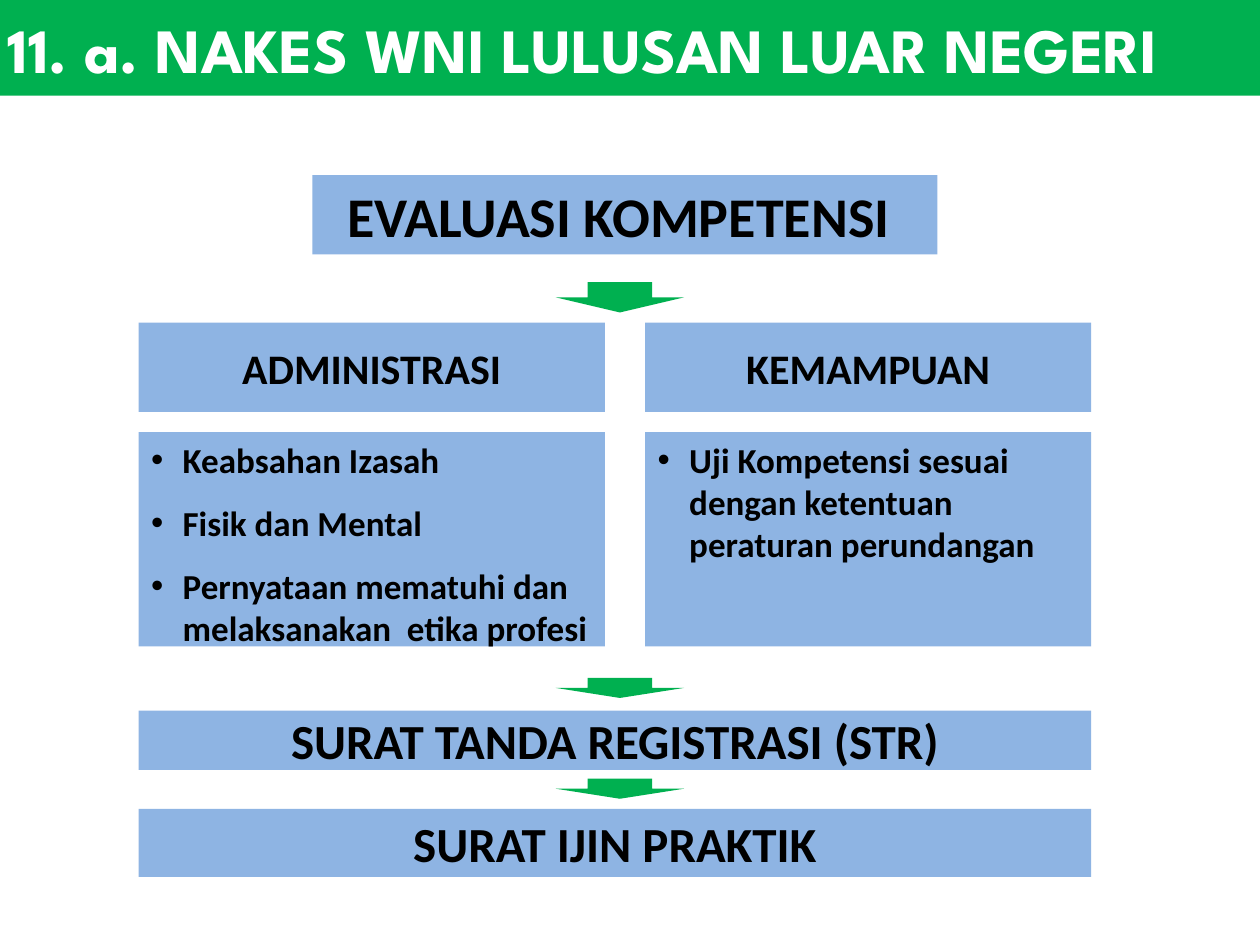
import pptx
import pptx.util
import pptx.dml.color
import pptx.enum.shapes
import pptx.enum.text
import pptx.oxml.ns
from lxml import etree

Inches = pptx.util.Inches
Pt = pptx.util.Pt
SHAPES = pptx.enum.shapes.MSO_SHAPE
ALIGN = pptx.enum.text.PP_ALIGN
ANCHOR = pptx.enum.text.MSO_ANCHOR

TITLE = "11. a. NAKES WNI LULUSAN LUAR NEGERI"
EVALUATION = "EVALUASI KOMPETENSI "
# heading, items, space before each item
COLUMNS = [
    ("ADMINISTRASI",
     ["Keabsahan Izasah", "Fisik dan Mental",
      "Pernyataan mematuhi dan melaksanakan  etika profesi"], 6),
    ("KEMAMPUAN",
     ["Uji Kompetensi sesuai dengan ketentuan peraturan perundangan"], 12),
]
# text, top, height
LETTERS = [("SURAT TANDA REGISTRASI (STR)", 5.64, 0.47),
           ("SURAT IJIN PRAKTIK", 6.42, 0.54)]
# top, height
ARROWS = [(2.24, 0.24), (5.38, 0.16), (6.18, 0.16)]

THEME = {
    "font": "Calibri", "title_font": "League Spartan",
    "box": "8EB4E3", "accent": "00B050", "text": "000000", "title_text": "FFFFFF",
    "title": 36, "evaluation": 32, "letter": 28, "heading": 24, "item": 20,
}
LEFT, WIDTH = 1.1, 7.56
FIRST_COLUMN, COLUMN_GAP = 3.7, 0.32
HEADING_TOP, HEADING_HEIGHT = 2.56, 0.71
LIST_TOP, LIST_HEIGHT = 3.43, 1.7
ARROW_LEFT, ARROW_WIDTH = 4.41, 1.02
BULLET_INDENT = 0.25


def color(name):
    return pptx.dml.color.RGBColor.from_string(THEME[name])


def place(part, left, top, width, height, fill="box"):
    part.left, part.top = Inches(left), Inches(top)
    part.width, part.height = Inches(width), Inches(height)
    part.fill.solid()
    part.fill.fore_color.rgb = color(fill)
    return part


def add_box(slide, left, top, width, height, preset=SHAPES.RECTANGLE, fill="box"):
    box = slide.shapes.add_shape(preset, 0, 0, 0, 0)
    box.shadow.inherit = False
    box.line.fill.background()
    return place(box, left, top, width, height, fill)


def add_bullet(paragraph):
    properties = paragraph._p.get_or_add_pPr()
    properties.set("marL", str(Inches(BULLET_INDENT)))
    properties.set("indent", str(-Inches(BULLET_INDENT)))
    qn = pptx.oxml.ns.qn
    etree.SubElement(properties, qn("a:buFont"), typeface="Arial")
    etree.SubElement(properties, qn("a:buChar"), char="•")


def write(part, *lines, size, font="font", ink="text", align=ALIGN.CENTER,
          anchor=ANCHOR.MIDDLE, before=0, after=0, bullets=False):
    frame = part.text_frame
    frame.word_wrap = True
    frame.auto_size = pptx.enum.text.MSO_AUTO_SIZE.NONE
    frame.vertical_anchor = anchor
    frame.text = "\n".join(lines)
    for paragraph in frame.paragraphs:
        paragraph.alignment = align
        paragraph.space_before, paragraph.space_after = Pt(before), Pt(after)
        if bullets:
            add_bullet(paragraph)
        for run in paragraph.runs:
            run.font.name = THEME[font]
            run.font.size = Pt(THEME[size])
            run.font.bold = True
            run.font.color.rgb = color(ink)


def main():
    deck = pptx.Presentation()
    deck.slide_width, deck.slide_height = Inches(10), Inches(7.5)
    comparison = deck.slide_layouts.get_by_name("Comparison")
    slide = deck.slides.add_slide(comparison)
    title, *bodies = slide.placeholders

    place(title, -0.04, 0, 10.04, 0.76, fill="accent")
    write(title, TITLE, size="title", font="title_font", ink="title_text",
          align=ALIGN.LEFT)

    evaluation = add_box(slide, 2.48, 1.39, 4.96, 0.63)
    write(evaluation, EVALUATION, size="evaluation", anchor=ANCHOR.TOP)

    second_left = LEFT + FIRST_COLUMN + COLUMN_GAP
    spans = [(LEFT, FIRST_COLUMN), (second_left, LEFT + WIDTH - second_left)]
    pairs = zip(bodies[::2], bodies[1::2])
    for (heading, items, before), (left, width), (head, body) in zip(
            COLUMNS, spans, pairs):
        place(head, left, HEADING_TOP, width, HEADING_HEIGHT)
        write(head, heading, size="heading")
        place(body, left, LIST_TOP, width, LIST_HEIGHT)
        write(body, *items, size="item", align=ALIGN.LEFT, anchor=ANCHOR.TOP,
              before=before, after=6, bullets=True)

    for text, top, height in LETTERS:
        write(add_box(slide, LEFT, top, WIDTH, height), text, size="letter")

    for top, height in ARROWS:
        add_box(slide, ARROW_LEFT, top, ARROW_WIDTH, height,
                preset=SHAPES.DOWN_ARROW, fill="accent")

    deck.save("out.pptx")


if __name__ == "__main__":
    main()
